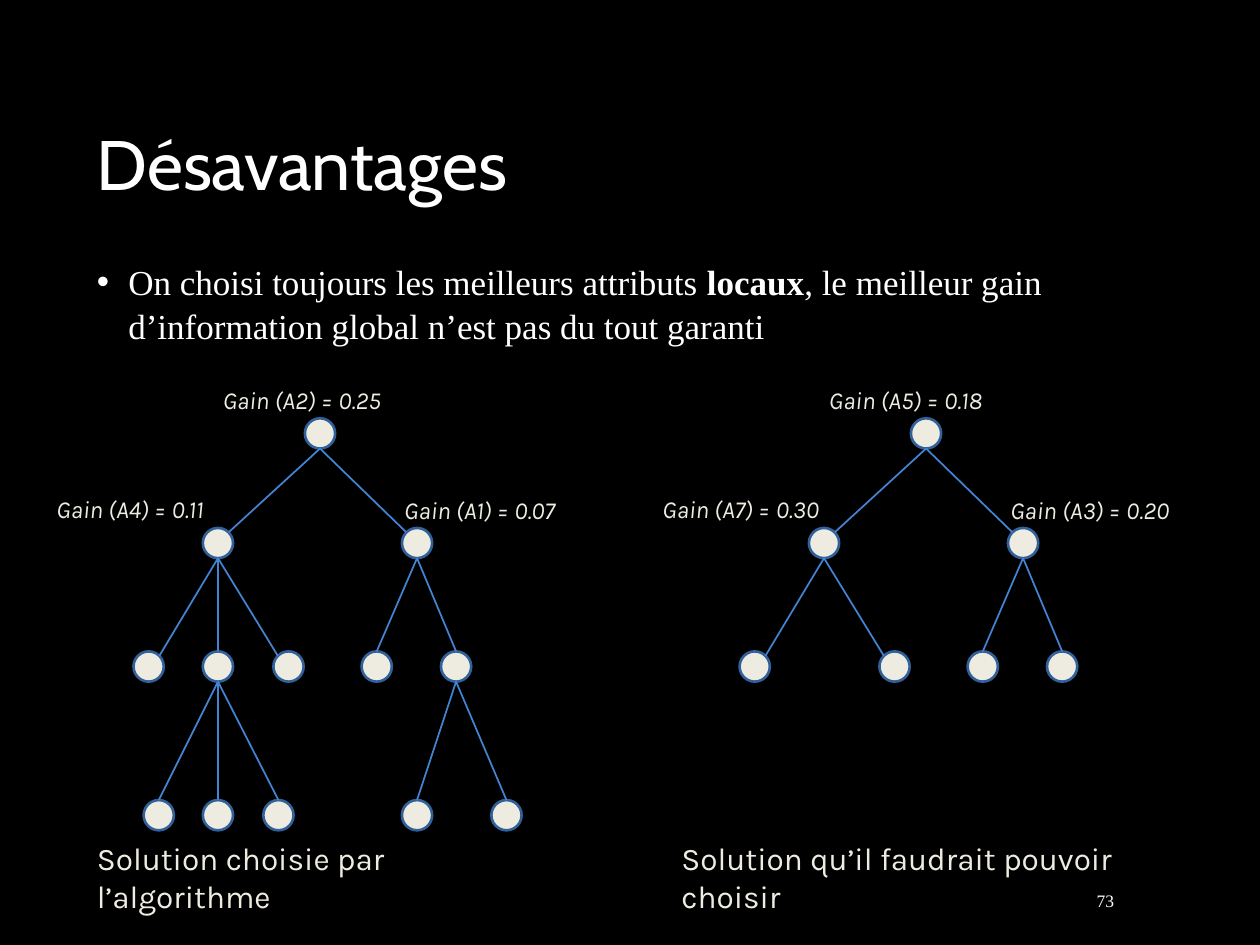
from dataclasses import dataclass
from math import copysign, sqrt
from typing import Iterator, Optional

from lxml.etree import SubElement
from pptx import Presentation
from pptx.dml.color import RGBColor
from pptx.enum.shapes import MSO_CONNECTOR, MSO_SHAPE
from pptx.enum.text import MSO_ANCHOR, PP_ALIGN
from pptx.oxml.ns import qn
from pptx.slide import Slide
from pptx.text.text import TextFrame, _Paragraph
from pptx.util import Inches, Pt


@dataclass(frozen=True)
class Theme:
    background: RGBColor = RGBColor.from_string("000000")
    text: RGBColor = RGBColor.from_string("FFFFFF")
    cream: RGBColor = RGBColor.from_string("EEECE1")
    outline: RGBColor = RGBColor.from_string("31619B")
    edge: RGBColor = RGBColor.from_string("4283D2")
    title_font: str = "Cabin"
    body_font: str = "Times New Roman"
    label_font: str = "Karla"
    title_size: int = 40
    body_size: int = 20
    caption_size: int = 18
    gain_size: int = 14
    number_size: int = 10


@dataclass(frozen=True)
class Style:
    font: str
    size: int
    color: RGBColor
    italic: bool = False


@dataclass(frozen=True)
class Box:
    left: float
    top: float
    width: float
    height: float


@dataclass(frozen=True)
class Node:
    x: float
    children: tuple["Node", ...] = ()


@dataclass(frozen=True)
class Tree:
    shift: float
    root: Node
    gains: tuple[str, str, str]
    caption: str
    caption_box: Box


THEME = Theme()
TITLE = Style(THEME.title_font, THEME.title_size, THEME.text)
BODY = Style(THEME.body_font, THEME.body_size, THEME.text)
CAPTION = Style(THEME.label_font, THEME.caption_size, THEME.cream)
GAIN = Style(THEME.label_font, THEME.gain_size, THEME.cream, italic=True)
NUMBER = Style(THEME.body_font, THEME.number_size, THEME.text)

LEVELS = (3.44, 4.31, 5.29, 6.47)
RADIUS = 0.12
WIDE_BRANCH = 0.5
GAIN_CORNERS = ((1.67, 3.01), (0.35, 3.87), (3.11, 3.88))


def leaves(*xs: float) -> tuple[Node, ...]:
    return tuple(Node(x) for x in xs)


CHOSEN = Node(2.54, (
    Node(1.73, (Node(1.18), Node(1.73, leaves(1.26, 1.73, 2.21)), Node(2.29))),
    Node(3.31, (Node(2.99), Node(3.62, leaves(3.31, 4.02)))),
))
WANTED = Node(2.54, (
    Node(1.73, leaves(1.18, 2.29)),
    Node(3.31, leaves(2.99, 3.62)),
))
TREES = (
    Tree(0, CHOSEN, ("Gain (A2) = 0.25", "Gain (A4) = 0.11", "Gain (A1) = 0.07"),
         "Solution choisie par l’algorithme", Box(0.67, 6.61, 3.75, 0.4)),
    Tree(4.81, WANTED, ("Gain (A5) = 0.18", "Gain (A7) = 0.30", "Gain (A3) = 0.20"),
         "Solution qu’il faudrait pouvoir choisir", Box(5.31, 6.61, 4.23, 0.4)),
)


def add_run(paragraph: _Paragraph, text: str, style: Style,
            bold: Optional[bool] = None) -> None:
    run = paragraph.add_run()
    run.text = text
    run.font.name = style.font
    run.font.size = Pt(style.size)
    run.font.color.rgb = style.color
    run.font.italic = style.italic
    run.font.bold = bold


def add_frame(slide: Slide, box: Box,
              anchor: MSO_ANCHOR = MSO_ANCHOR.TOP) -> TextFrame:
    frame = slide.shapes.add_textbox(
        Inches(box.left), Inches(box.top), Inches(box.width), Inches(box.height)
    ).text_frame
    frame.word_wrap = True
    frame.vertical_anchor = anchor
    return frame


def add_label(slide: Slide, box: Box, text: str, style: Style) -> None:
    add_run(add_frame(slide, box).paragraphs[0], text, style)


def add_bullet(paragraph: _Paragraph, indent: float) -> None:
    properties = paragraph._p.get_or_add_pPr()
    properties.set("marL", str(Inches(indent)))
    properties.set("indent", str(Inches(-indent)))
    SubElement(properties, qn("a:buFont"), typeface="Arial")
    SubElement(properties, qn("a:buChar"), char="•")


def walk(node: Node, depth: int = 0) -> Iterator[tuple[Node, int]]:
    yield node, depth
    for child in node.children:
        yield from walk(child, depth + 1)


def draw_node(slide: Slide, x: float, y: float) -> None:
    circle = slide.shapes.add_shape(
        MSO_SHAPE.OVAL, Inches(x - RADIUS), Inches(y - RADIUS),
        Inches(2 * RADIUS), Inches(2 * RADIUS))
    circle.shadow.inherit = False
    circle.fill.solid()
    circle.fill.fore_color.rgb = THEME.cream
    circle.line.color.rgb = THEME.outline
    circle.line.width = Pt(1.5)


def draw_edge(slide: Slide, parent: Node, child: Node, depth: int, shift: float) -> None:
    run = parent.x - child.x
    diagonal = RADIUS / sqrt(2)
    if abs(run) > WIDE_BRANCH:
        reach, rise = copysign(diagonal, run), diagonal
    else:
        reach, rise = 0, RADIUS
    edge = slide.shapes.add_connector(
        MSO_CONNECTOR.STRAIGHT,
        Inches(parent.x + shift), Inches(LEVELS[depth] + RADIUS),
        Inches(child.x + shift + reach), Inches(LEVELS[depth + 1] - rise))
    edge.line.color.rgb = THEME.edge
    edge.line.width = Pt(1)
    SubElement(edge._element.spPr, qn("a:effectLst"))


def draw_tree(slide: Slide, tree: Tree) -> None:
    for node, depth in walk(tree.root):
        draw_node(slide, node.x + tree.shift, LEVELS[depth])
    for node, depth in walk(tree.root):
        for child in node.children:
            draw_edge(slide, node, child, depth, tree.shift)
    for gain, (left, top) in zip(tree.gains, GAIN_CORNERS):
        add_label(slide, Box(left + tree.shift, top, 1.67, 0.34), gain, GAIN)
    add_label(slide, tree.caption_box, tree.caption, CAPTION)


def main() -> None:
    deck = Presentation()
    deck.slide_width, deck.slide_height = Inches(10), Inches(7.5)
    slide = deck.slides.add_slide(deck.slide_layouts[6])
    slide.background.fill.solid()
    slide.background.fill.fore_color.rgb = THEME.background

    heading = add_frame(slide, Box(0.67, 0.42, 8.66, 1.25), MSO_ANCHOR.BOTTOM).paragraphs[0]
    heading.line_spacing = 0.8
    add_run(heading, "Désavantages", TITLE)

    drawback = add_frame(slide, Box(0.67, 2, 8.66, 4.75)).paragraphs[0]
    drawback.line_spacing = 1.05
    add_bullet(drawback, 0.25)
    add_run(drawback, "On choisi toujours les meilleurs attributs ", BODY)
    add_run(drawback, "locaux", BODY, bold=True)
    add_run(drawback, ", le meilleur gain d’information global n’est pas du tout garanti", BODY)

    page = add_frame(slide, Box(7.94, 7, 1, 0.3), MSO_ANCHOR.MIDDLE).paragraphs[0]
    page.alignment = PP_ALIGN.RIGHT
    add_run(page, "73", NUMBER)

    for tree in TREES:
        draw_tree(slide, tree)

    deck.save("out.pptx")


if __name__ == "__main__":
    main()
